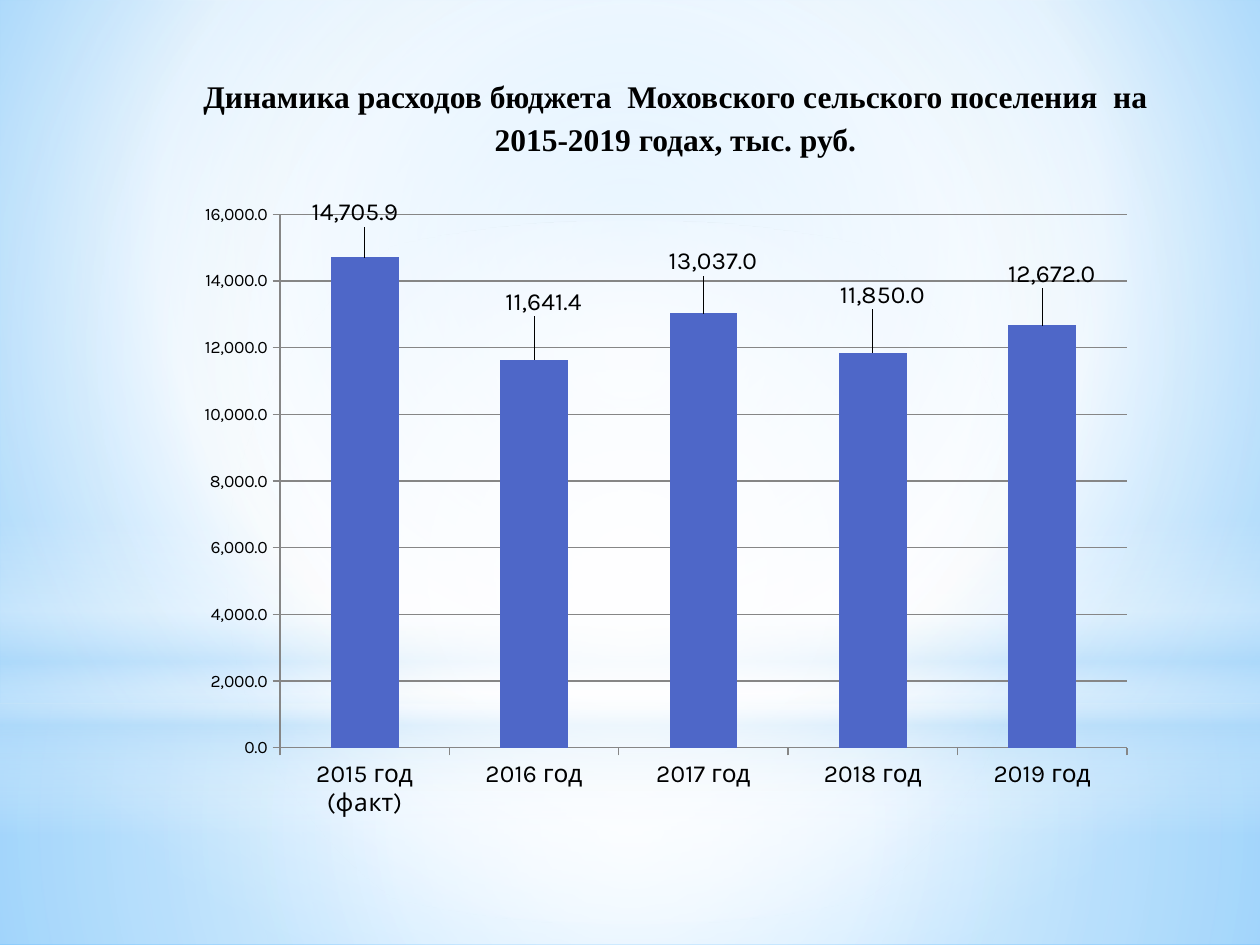
"""Build a slide with a column chart of budget spending over a soft blue glow."""
from dataclasses import dataclass
from typing import Optional

import lxml.etree
import pptx
import pptx.chart.data
import pptx.dml.color
import pptx.enum.chart
import pptx.enum.shapes
import pptx.enum.text
import pptx.oxml
import pptx.oxml.ns
import pptx.util

Pt = pptx.util.Pt
qn = pptx.oxml.ns.qn
RGBColor = pptx.dml.color.RGBColor
SHAPE = pptx.enum.shapes.MSO_SHAPE
XL = pptx.enum.chart

BLACK = RGBColor(0, 0, 0)
WHITE = RGBColor(0xFF, 0xFF, 0xFF)
PALE = RGBColor(0xB4, 0xDC, 0xFA)
SKY = RGBColor(0x9E, 0xD5, 0xFF)
AZURE = RGBColor(0x5B, 0xB9, 0xFF)
COLUMN = RGBColor(0x4E, 0x67, 0xC8)
GRID = RGBColor(0x86, 0x86, 0x86)
NUMBER = "#,##0.0"


@dataclass
class Stop:
    pos: int
    color: RGBColor
    alpha: int = 100


@dataclass
class Glow:
    top: float
    height: float
    stops: list[Stop]
    focus: Optional[tuple[int, int, int, int]] = (50, 50, 50, 50)
    kind: SHAPE = SHAPE.RECTANGLE


@dataclass
class Year:
    name: str
    value: float
    dx: float
    dy: float


BACKDROP = [Stop(0, SKY), Stop(60, WHITE), Stop(100, AZURE)]
GLOWS = [
    Glow(402, 138, [Stop(0, WHITE, 91), Stop(37, WHITE, 76), Stop(100, PALE, 79)]),
    Glow(0, 402, [Stop(0, WHITE, 89), Stop(48, WHITE, 62), Stop(100, PALE, 79)]),
    Glow(297, 180, [Stop(0, WHITE, 0), Stop(29, WHITE, 30), Stop(45, PALE, 40),
                    Stop(55, WHITE, 26), Stop(65, PALE, 60), Stop(100, WHITE, 0)], None),
    Glow(126, 402, [Stop(0, WHITE), Stop(56, WHITE, 0)], kind=SHAPE.OVAL),
]
YEARS = [
    Year("2015 год (факт)", 14705.9, -0.01, -0.04),
    Year("2016 год", 11641.4, 0.01, -0.06),
    Year("2017 год", 13037, 0.01, -0.05),
    Year("2018 год", 11850, 0.01, -0.06),
    Year("2019 год", 12672, 0.01, -0.05),
]


def gradient(stops: list[Stop], focus: Optional[tuple[int, int, int, int]]):
    """Return a gradient fill, circular around focus or else running downwards."""
    gs = "".join(
        f'<a:gs pos="{st.pos * 1000}"><a:srgbClr val="{st.color}">'
        f'<a:alpha val="{st.alpha * 1000}"/></a:srgbClr></a:gs>' for st in stops)
    if focus:
        left, top, right, bottom = (n * 1000 for n in focus)
        course = (f'<a:path path="circle"><a:fillToRect l="{left}" t="{top}" '
                  f'r="{right}" b="{bottom}"/></a:path>')
    else:
        course = '<a:lin ang="5400000" scaled="0"/>'
    return pptx.oxml.parse_xml(
        f'<a:gradFill {pptx.oxml.ns.nsdecls("a")} rotWithShape="1">'
        f'<a:gsLst>{gs}</a:gsLst>{course}</a:gradFill>')


def add_backdrop(s) -> None:
    """Fill the slide background with its gradient."""
    s.background.fill.solid()
    solid = next(s._element.iter(qn("a:solidFill")))
    solid.getparent().replace(solid, gradient(BACKDROP, (20, 10, 20, 60)))


def add_glow(s, glow: Glow) -> None:
    """Draw one full-width gradient shape."""
    sp = s.shapes.add_shape(glow.kind, 0, Pt(glow.top), Pt(720), Pt(glow.height))
    sp.shadow.inherit = False
    sp.line.fill.background()
    sp.fill.solid()
    solid = sp._element.spPr.find(qn("a:solidFill"))
    sp._element.spPr.replace(solid, gradient(glow.stops, glow.focus))


def add_title(s) -> None:
    """Write the heading."""
    tf = s.shapes.add_textbox(Pt(105), Pt(37), Pt(562), Pt(58)).text_frame
    tf.word_wrap = True
    p = tf.paragraphs[0]
    p.text = ("Динамика расходов бюджета  Моховского сельского поселения  "
              "на 2015-2019 годах, тыс. руб.")
    p.alignment = pptx.enum.text.PP_ALIGN.CENTER
    p.line_spacing = 1.15
    p.font.name, p.font.size, p.font.bold = "Times New Roman", Pt(18), True
    p.font.color.rgb = BLACK


def set_layout(parent, index: int, **settings) -> None:
    """Give a chart part a manual layout, placed at index among its children."""
    for old in parent.findall(qn("c:layout")):
        parent.remove(old)
    layout = parent.makeelement(qn("c:layout"))
    manual = lxml.etree.SubElement(layout, qn("c:manualLayout"))
    for name, value in settings.items():
        lxml.etree.SubElement(manual, qn(f"c:{name}")).set("val", str(value))
    parent.insert(index, layout)


def style_font(font, size: float) -> None:
    """Set the chart font."""
    font.name, font.size = "Karla", Pt(size)
    font.color.rgb = BLACK


def add_spending_chart(s) -> None:
    """Draw the spending columns with their shifted value labels."""
    data = pptx.chart.data.CategoryChartData(number_format=NUMBER)
    data.categories = [year.name for year in YEARS]
    data.add_series("Series 1", [year.value for year in YEARS])
    chart = s.shapes.add_chart(XL.XL_CHART_TYPE.COLUMN_CLUSTERED, Pt(105), Pt(111.6),
                               Pt(550), Pt(363), data).chart
    chart.has_title = chart.has_legend = False
    style_font(chart.font, 10)
    set_layout(chart._chartSpace.chart.plotArea, 0, layoutTarget="inner",
               xMode="edge", yMode="edge", x=0.1, y=0.03, w=0.88, h=0.84)

    for axis, size in ((chart.category_axis, 14), (chart.value_axis, 10)):
        style_font(axis.tick_labels.font, size)
        axis.major_tick_mark = XL.XL_TICK_MARK.OUTSIDE
        axis.format.line.color.rgb = GRID
        axis.format.line.width = Pt(0.75)
    axis = chart.value_axis
    axis.minimum_scale, axis.maximum_scale, axis.major_unit = 0, 16000, 2000
    axis.tick_labels.number_format = NUMBER
    axis.tick_labels.number_format_is_linked = False
    axis.major_gridlines.format.line.color.rgb = GRID
    axis.major_gridlines.format.line.width = Pt(0.75)

    plot = chart.plots[0]
    plot.gap_width, plot.vary_by_categories = 150, False
    series = plot.series[0]
    series.format.fill.solid()
    series.format.fill.fore_color.rgb = COLUMN
    labels = series.data_labels
    labels.show_value = True
    labels.number_format, labels.number_format_is_linked = NUMBER, False
    style_font(labels.font, 14)
    for i in range(len(YEARS)):
        label = series.points[i].data_label
        label.position = XL.XL_LABEL_POSITION.OUTSIDE_END
        style_font(label.font, 14)
    for year, label in zip(YEARS, series._element.iter(qn("c:dLbl"))):
        set_layout(label, 1, x=year.dx, y=year.dy)


def main() -> None:
    """Build and save the slide."""
    prs = pptx.Presentation()
    prs.slide_width, prs.slide_height = Pt(720), Pt(540)
    s = prs.slides.add_slide(prs.slide_layouts[6])
    add_backdrop(s)
    for glow in GLOWS:
        add_glow(s, glow)
    add_title(s)
    add_spending_chart(s)
    prs.save("out.pptx")


if __name__ == "__main__":
    main()
